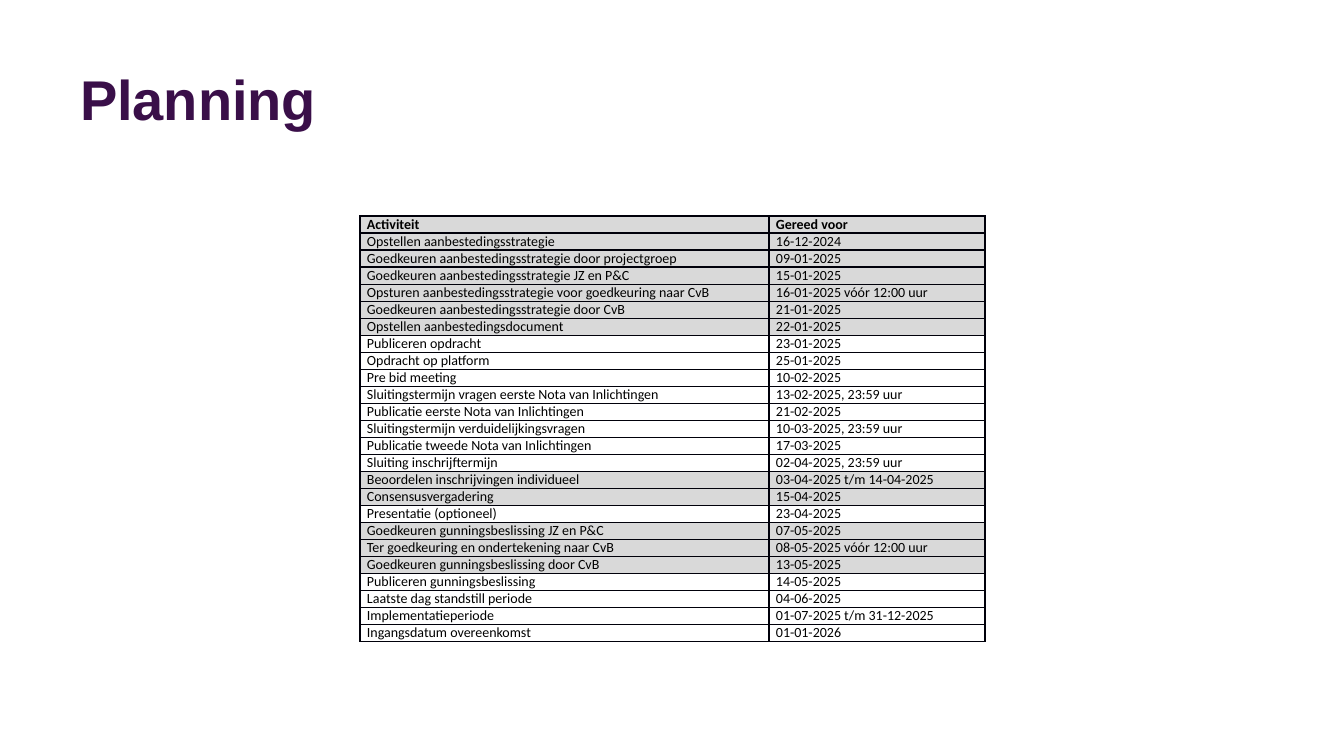
"""Build the planning slide with its table of tender activities."""
from dataclasses import dataclass

from lxml.etree import SubElement
from pptx import Presentation
from pptx.dml.color import RGBColor
from pptx.enum.text import MSO_ANCHOR as Anchor, PP_ALIGN as Align
from pptx.oxml.ns import qn
from pptx.slide import Slide
from pptx.table import _Cell as Cell
from pptx.text.text import _Paragraph as Paragraph
from pptx.util import Emu, Pt

EMU_PER_PX = 914400 / 100.8
PURPLE, BLACK, GREY, BORDER = "3A0F49", "000000", "D9D9D9", "00000A"
COLUMN_WIDTHS = (409, 216)
ROW_HEIGHT = 17
CELL_INSET = 7


@dataclass(frozen=True)
class Activity:
    name: str
    ready_by: str
    shaded: bool = False
    bold: bool = False


ACTIVITIES = (
    Activity("Activiteit", "Gereed voor", shaded=True, bold=True),
    Activity("Opstellen aanbestedingsstrategie", "16-12-2024", shaded=True),
    Activity("Goedkeuren aanbestedingsstrategie door projectgroep", "09-01-2025", shaded=True),
    Activity("Goedkeuren aanbestedingsstrategie JZ en P&C", "15-01-2025", shaded=True),
    Activity("Opsturen aanbestedingsstrategie voor goedkeuring naar CvB",
             "16-01-2025 vóór 12:00 uur", shaded=True),
    Activity("Goedkeuren aanbestedingsstrategie door CvB", "21-01-2025", shaded=True),
    Activity("Opstellen aanbestedingsdocument", "22-01-2025", shaded=True),
    Activity("Publiceren opdracht", "23-01-2025"),
    Activity("Opdracht op platform", "25-01-2025"),
    Activity("Pre bid meeting", "10-02-2025"),
    Activity("Sluitingstermijn vragen eerste Nota van Inlichtingen", "13-02-2025, 23:59 uur"),
    Activity("Publicatie eerste Nota van Inlichtingen", "21-02-2025"),
    Activity("Sluitingstermijn verduidelijkingsvragen", "10-03-2025, 23:59 uur"),
    Activity("Publicatie tweede Nota van Inlichtingen", "17-03-2025"),
    Activity("Sluiting inschrijftermijn", "02-04-2025, 23:59 uur"),
    Activity("Beoordelen inschrijvingen individueel", "03-04-2025 t/m 14-04-2025", shaded=True),
    Activity("Consensusvergadering", "15-04-2025", shaded=True),
    Activity("Presentatie (optioneel)", "23-04-2025"),
    Activity("Goedkeuren gunningsbeslissing JZ en P&C", "07-05-2025", shaded=True),
    Activity("Ter goedkeuring en ondertekening naar CvB", "08-05-2025 vóór 12:00 uur", shaded=True),
    Activity("Goedkeuren gunningsbeslissing door CvB", "13-05-2025", shaded=True),
    Activity("Publiceren gunningsbeslissing", "14-05-2025"),
    Activity("Laatste dag standstill periode", "04-06-2025"),
    Activity("Implementatieperiode", "01-07-2025 t/m 31-12-2025"),
    Activity("Ingangsdatum overeenkomst", "01-01-2026"),
)


def px(length: int) -> Emu:
    """Turn whole pixels into EMU."""
    return Emu(round(length * EMU_PER_PX))


def rgb(hex_colour: str) -> RGBColor:
    """Turn a hex string into a colour."""
    return RGBColor.from_string(hex_colour)


def add_run(paragraph: Paragraph, wording: str, font: str, size: int,
            colour: str, bold: bool) -> None:
    """Add one formatted run to a paragraph."""
    run = paragraph.add_run()
    run.text = wording
    run.font.name = font
    run.font.size = Pt(size)
    run.font.bold = bold
    run.font.color.rgb = rgb(colour)


def add_borders(cell: Cell) -> None:
    """Draw a one-point line on each side of a cell."""
    properties = cell._tc.get_or_add_tcPr()
    for side in ("a:lnL", "a:lnR", "a:lnT", "a:lnB"):
        line = SubElement(properties, qn(side), w=str(Pt(1)))
        fill = SubElement(line, qn("a:solidFill"))
        SubElement(fill, qn("a:srgbClr"), val=BORDER)


def fill_cell(cell: Cell, wording: str, activity: Activity) -> None:
    """Format one table cell and write its text."""
    cell.margin_left = cell.margin_right = px(CELL_INSET)
    cell.margin_top = cell.margin_bottom = 0
    add_borders(cell)
    if activity.shaded:
        cell.fill.solid()
        cell.fill.fore_color.rgb = rgb(GREY)
    else:
        cell.fill.background()
    add_run(cell.text_frame.paragraphs[0], wording, "Calibri", 10, BLACK, activity.bold)


def add_title(slide: Slide, wording: str) -> None:
    """Place and format the slide title."""
    title = slide.shapes.title
    title.left, title.top, title.width, title.height = map(px, (80, 72, 1185, 125))
    frame = title.text_frame
    frame.margin_left = frame.margin_right = frame.margin_top = frame.margin_bottom = 0
    frame.vertical_anchor = Anchor.TOP
    frame.word_wrap = True
    heading = frame.paragraphs[0]
    heading.alignment = Align.LEFT
    heading.line_spacing = 0.9
    add_run(heading, wording, "Arial", 40, PURPLE, True)


def add_planning(slide: Slide) -> None:
    """Add the table of activities and dates."""
    planning = slide.shapes.add_table(
        len(ACTIVITIES), len(COLUMN_WIDTHS), px(360), px(216),
        px(sum(COLUMN_WIDTHS)), px(ROW_HEIGHT * len(ACTIVITIES))).table
    planning.first_row = planning.horz_banding = False
    for column, width in zip(planning.columns, COLUMN_WIDTHS):
        column.width = px(width)
    for row, activity in zip(planning.rows, ACTIVITIES):
        row.height = px(ROW_HEIGHT)
        for cell, wording in zip(row.cells, (activity.name, activity.ready_by)):
            fill_cell(cell, wording, activity)


def main() -> None:
    """Build and save the presentation."""
    deck = Presentation()
    deck.slide_width, deck.slide_height = px(1344), px(756)
    slide = deck.slides.add_slide(deck.slide_layouts[5])
    add_title(slide, "Planning")
    add_planning(slide)
    deck.save("out.pptx")


if __name__ == "__main__":
    main()
